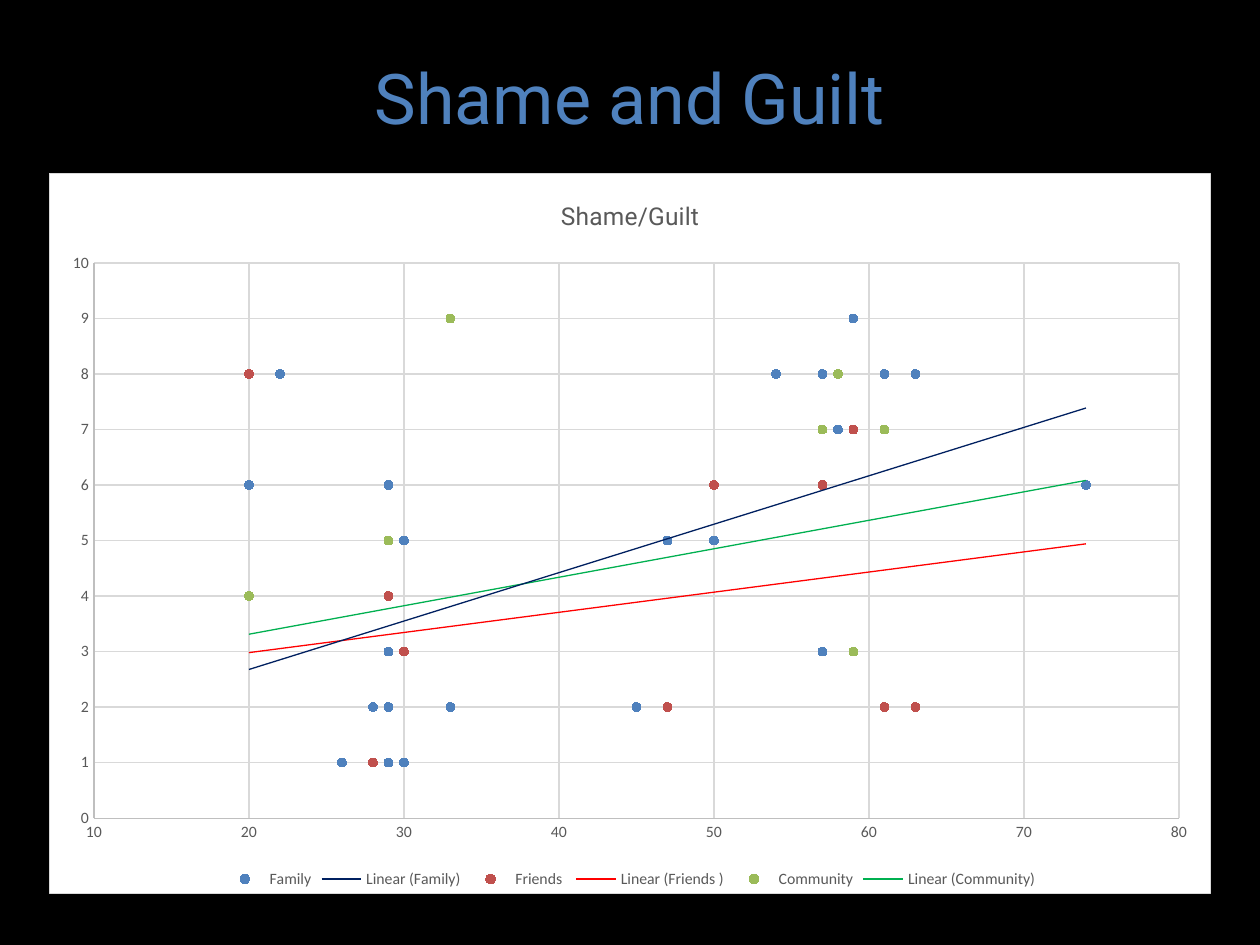
from lxml import etree
from pptx import Presentation
from pptx.chart.data import XyChartData
from pptx.dml.color import RGBColor
from pptx.enum.chart import XL_CHART_TYPE, XL_LEGEND_POSITION, XL_MARKER_STYLE, XL_TICK_MARK
from pptx.enum.text import MSO_ANCHOR, PP_ALIGN
from pptx.oxml import parse_xml
from pptx.util import Inches, Pt

SCATTER = XL_CHART_TYPE.XY_SCATTER
BOTTOM = XL_LEGEND_POSITION.BOTTOM
CIRCLE = XL_MARKER_STYLE.CIRCLE
NO_TICK = XL_TICK_MARK.NONE
MIDDLE = MSO_ANCHOR.MIDDLE
CENTER = PP_ALIGN.CENTER

WIDTH, HEIGHT = Inches(10), Inches(7.5)
HAIRLINE = Pt(0.75)
NS = ('xmlns:c="http://schemas.openxmlformats.org/drawingml/2006/chart" '
      'xmlns:a="http://schemas.openxmlformats.org/drawingml/2006/main"')
COLORS = {
    "background": "000000", "title": "4F81BD", "panel": "FFFFFF",
    "text": "595959", "grid": "D9D9D9", "axis": "BFBFBF",
}
AGES = [20, 22, 26, 28, 29, 29, 29, 29, 29, 30, 30, 33,
        45, 47, 50, 54, 57, 57, 57, 58, 59, 61, 63, 74]
GROUPS = [
    ("Family", "4F81BD", "002060",
     [6, 8, 1, 2, 1, 6, 2, 2, 3, 1, 5, 2, 2, 5, 5, 8, 3, 3, 8, 7, 9, 8, 8, 6]),
    ("Friends ", "C0504D", "FF0000",
     [8, 8, 1, 1, 1, 3, 3, 2, 4, 1, 3, 2, 2, 2, 6, 8, 3, 3, 6, 7, 7, 2, 2, 6]),
    ("Community", "9BBB59", "00B050",
     [4, 8, 1, 1, 5, 3, 4, 2, 4, 1, 3, 9, 2, 2, 6, 8, 8, 3, 7, 8, 3, 7, 2, 6]),
]


def rgb(value):
    """Return a colour from a hex string."""
    return RGBColor.from_string(value)


def share(left, top, width, height):
    """Turn shares of the slide's size into lengths."""
    return (int(WIDTH * left), int(HEIGHT * top),
            int(WIDTH * width), int(HEIGHT * height))


def set_font(font, size, color, name):
    """Set the size, colour and typeface of a font."""
    font.size = Pt(size)
    font.bold = False
    font.color.rgb = rgb(color)
    font.name = name


def add_title(slide, text):
    """Add the centred slide title."""
    tf = slide.shapes.add_textbox(*share(0.05, 0.04, 0.9, 0.125)).text_frame
    tf.word_wrap = True
    tf.vertical_anchor = MIDDLE
    p = tf.paragraphs[0]
    p.text = text
    p.alignment = CENTER
    set_font(p.font, 40, COLORS["title"], "Roboto")


def style_axis(axis, low, high, step):
    """Set the scale, grid and labels of an axis."""
    axis.minimum_scale, axis.maximum_scale, axis.major_unit = low, high, step
    axis.major_tick_mark = axis.minor_tick_mark = NO_TICK
    axis.has_major_gridlines = True
    for line, color in ((axis.format.line, "axis"),
                        (axis.major_gridlines.format.line, "grid")):
        line.color.rgb = rgb(COLORS[color])
        line.width = HAIRLINE
    set_font(axis.tick_labels.font, 9, COLORS["text"], "Calibri")


def style_series(series, color, trend_color):
    """Give a series round markers and a linear trend line."""
    series.format.line.fill.background()
    marker = series.marker
    marker.style, marker.size = CIRCLE, 5
    marker.format.fill.solid()
    marker.format.fill.fore_color.rgb = rgb(color)
    marker.format.line.color.rgb = rgb(color)
    trend = parse_xml(
        f'<c:trendline {NS}><c:spPr><a:ln w="{HAIRLINE}"><a:solidFill>'
        f'<a:srgbClr val="{trend_color}"/></a:solidFill></a:ln></c:spPr>'
        '<c:trendlineType val="linear"/><c:dispRSqr val="0"/>'
        '<c:dispEq val="0"/></c:trendline>')
    xml = series._element
    xml.find(etree.QName(xml.nsmap["c"], "xVal")).addprevious(trend)


def fill_panel(chart):
    """Give the chart area a plain fill and a thin border."""
    space = chart._chartSpace
    panel = parse_xml(
        f'<c:spPr {NS}><a:solidFill><a:srgbClr val="{COLORS["panel"]}"/>'
        f'</a:solidFill><a:ln w="{HAIRLINE}"><a:solidFill>'
        f'<a:srgbClr val="{COLORS["grid"]}"/></a:solidFill></a:ln></c:spPr>')
    space.find(etree.QName(space.nsmap["c"], "chart")).addnext(panel)


def add_scatter(slide, title):
    """Add the scatter chart with one trend line for each group."""
    data = XyChartData()
    for name, _, _, scores in GROUPS:
        points = data.add_series(name)
        for age, score in zip(AGES, scores):
            points.add_data_point(age, score)
    box = share(0.039, 0.183, 0.922, 0.763)
    chart = slide.shapes.add_chart(SCATTER, *box, data).chart
    set_font(chart.font, 10, COLORS["background"], "Calibri")
    fill_panel(chart)
    chart.has_title = True
    p = chart.chart_title.text_frame.paragraphs[0]
    p.text = title
    set_font(p.font, 14, COLORS["text"], "Roboto")
    chart.chart_title.include_in_layout = False
    chart.has_legend = True
    chart.legend.position = BOTTOM
    chart.legend.include_in_layout = False
    set_font(chart.legend.font, 9, COLORS["text"], "Calibri")
    style_axis(chart.category_axis, 10, 80, 10)
    style_axis(chart.value_axis, 0, 10, 1)
    plot = chart.plots[0]
    plot.vary_by_categories = False
    for series, (_, color, trend_color, _) in zip(plot.series, GROUPS):
        style_series(series, color, trend_color)


def main():
    """Build the slide and save it."""
    prs = Presentation()
    prs.slide_width, prs.slide_height = WIDTH, HEIGHT
    slide = prs.slides.add_slide(prs.slide_layouts[6])
    fill = slide.background.fill
    fill.solid()
    fill.fore_color.rgb = rgb(COLORS["background"])
    add_title(slide, "Shame and Guilt")
    add_scatter(slide, "Shame/Guilt")
    prs.save("out.pptx")


if __name__ == "__main__":
    main()
